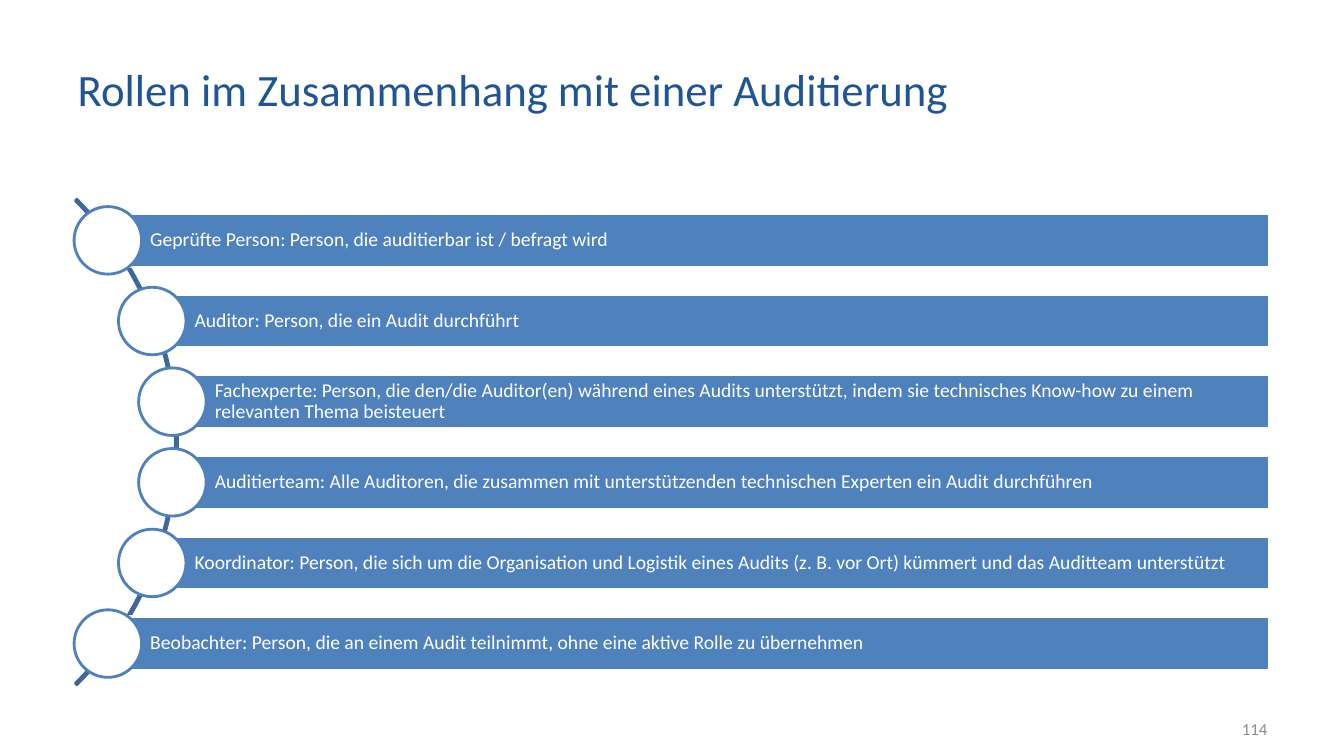
"""Build the slide on roles in an audit."""
import dataclasses

import pptx
import pptx.dml.color
import pptx.enum.shapes
import pptx.enum.text
import pptx.util

Inches = pptx.util.Inches
Pt = pptx.util.Pt
SHAPE = pptx.enum.shapes.MSO_SHAPE
ALIGN = pptx.enum.text.PP_ALIGN

TITLE = "Rollen im Zusammenhang mit einer Auditierung"
NUMBER = "114"
ROLES = [
    ("Geprüfte Person: Person, die auditierbar ist / befragt wird", 1.07),
    ("Auditor: Person, die ein Audit durchführt", 1.51),
    ("Fachexperte: Person, die den/die Auditor(en) während eines Audits unterstützt, "
     "indem sie technisches Know-how zu einem relevanten Thema beisteuert", 1.71),
    ("Auditierteam: Alle Auditoren, die zusammen mit unterstützenden technischen "
     "Experten ein Audit durchführen", 1.71),
    ("Koordinator: Person, die sich um die Organisation und Logistik eines Audits "
     "(z. B. vor Ort) kümmert und das Auditteam unterstützt", 1.51),
    ("Beobachter: Person, die an einem Audit teilnimmt, ohne eine aktive Rolle zu "
     "übernehmen", 1.07),
]


@dataclasses.dataclass(frozen=True)
class Theme:
    """Hold colours, font and type sizes."""
    font: str = "Calibri"
    title: str = "205595"
    bar: str = "4F81BD"
    arc: str = "3F6797"
    white: str = "FFFFFF"
    grey: str = "8C8C8C"
    head: int = 32
    body: int = 14
    foot: int = 12
    line: int = 2


THEME = Theme()
RIGHT, FIRST, STEP = 12.59, 2.385, 0.8
HEIGHT, DISC = 0.53, 0.67


def rgb(code):
    """Turn a hex code into a colour."""
    return pptx.dml.color.RGBColor.from_string(code)


def write(shape, text, size, color, align=ALIGN.LEFT):
    """Put one styled paragraph in a shape."""
    frame = shape.text_frame
    frame.text = text
    frame.word_wrap = True
    frame.auto_size = pptx.enum.text.MSO_AUTO_SIZE.NONE
    frame.vertical_anchor = pptx.enum.text.MSO_ANCHOR.MIDDLE
    para = frame.paragraphs[0]
    para.alignment = align
    para.font.name = THEME.font
    para.font.size = Pt(size)
    para.font.color.rgb = rgb(color)
    return frame


def draw(slide, kind, box, fill, line):
    """Add a flat preset shape."""
    shape = slide.shapes.add_shape(kind, *map(Inches, box))
    shape.shadow.inherit = False
    shape.fill.solid()
    shape.fill.fore_color.rgb = rgb(fill)
    shape.line.color.rgb = rgb(line)
    shape.line.width = Pt(THEME.line)
    return shape


def add_arc(slide):
    """Draw the thin arc behind the discs."""
    arc = draw(slide, SHAPE.BLOCK_ARC, (-5.05, 0.98, 6.81, 6.81), THEME.arc, THEME.arc)
    for index, value in enumerate((189, 27, 0.003)):
        arc.adjustments[index] = value


def add_role(slide, text, left, mid):
    """Draw one bar with its disc."""
    box = (left, mid - HEIGHT / 2, RIGHT - left, HEIGHT)
    bar = draw(slide, SHAPE.RECTANGLE, box, THEME.bar, THEME.white)
    frame = write(bar, text, THEME.body, THEME.white)
    frame.margin_left = Inches(0.42)
    frame.margin_top = frame.margin_right = frame.margin_bottom = Inches(0.04)
    frame.paragraphs[0].line_spacing = 0.9
    box = (left - DISC / 2, mid - DISC / 2, DISC, DISC)
    draw(slide, SHAPE.OVAL, box, THEME.white, THEME.bar)


def main():
    """Build and save the deck."""
    deck = pptx.Presentation()
    deck.slide_width, deck.slide_height = Inches(13.33), Inches(7.5)
    slide = deck.slides.add_slide(deck.slide_layouts[5])
    title = slide.shapes.title
    title.left, title.top = Inches(0.67), Inches(0.3)
    title.width, title.height = Inches(9.91), Inches(1.15)
    write(title, TITLE, THEME.head, THEME.title)
    add_arc(slide)
    for row, (text, left) in enumerate(ROLES):
        add_role(slide, text, left, FIRST + row * STEP)
    page = slide.shapes.add_textbox(*map(Inches, (9.56, 7.03, 3.11, 0.4)))
    write(page, NUMBER, THEME.foot, THEME.grey, ALIGN.RIGHT)
    deck.save("out.pptx")


if __name__ == "__main__":
    main()
